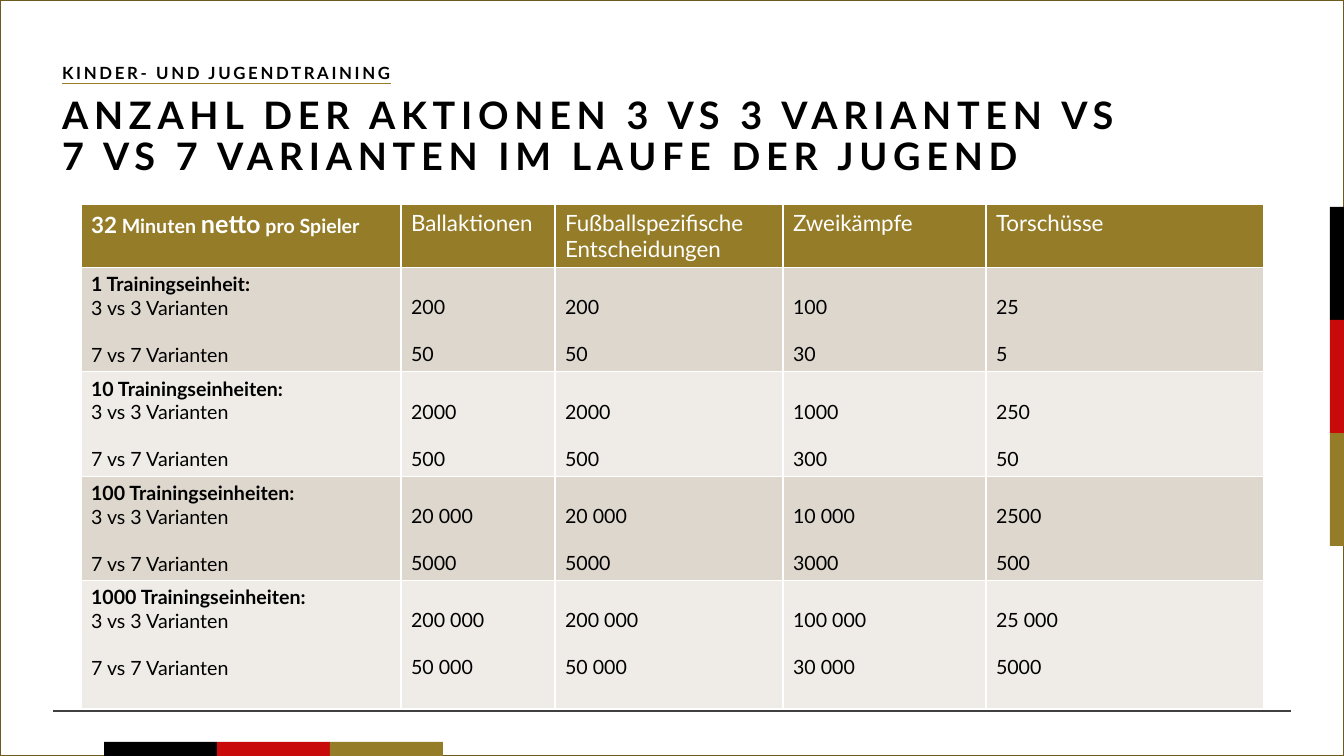
import pptx
import pptx.util
import pptx.dml.color
import pptx.enum.shapes
import pptx.enum.text
import pptx.oxml
import pptx.oxml.ns
from dataclasses import dataclass

SLIDE_W, SLIDE_H = 1344, 756
EMU_PER_PX = 12192000 / SLIDE_W


@dataclass(frozen=True)
class Theme:
    font: str = "Lato"
    black: str = "000000"
    white: str = "FFFFFF"
    red: str = "C80A0A"
    gold: str = "957C28"
    frame: str = "6E5C1E"
    rule: str = "404040"
    bands: tuple = ("DDD7CD", "EFECE8")
    title: int = 27
    kicker: int = 12
    large: int = 18
    header: int = 16
    cell: int = 14
    blank_line: float = 16.8


THEME = Theme()
FLAG = (THEME.black, THEME.red, THEME.gold)

# Table content: actions per player in one training session
HEADERS = ["Ballaktionen", "Fußballspezifische Entscheidungen", "Zweikämpfe", "Torschüsse"]
SMALL_GAME = [200, 200, 100, 25]
LARGE_GAME = [50, 50, 30, 5]
SESSIONS = [1, 10, 100, 1000]
COLUMN_WIDTHS = [320, 154, 228, 203, 278]
ROW_HEIGHTS = [63, 104, 104, 104, 128]


def px(n):
    return pptx.util.Emu(round(n * EMU_PER_PX))


def rgb(value):
    return pptx.dml.color.RGBColor.from_string(value)


def xml(tag, attributes, inner):
    return pptx.oxml.parse_xml(
        f'<a:{tag} {pptx.oxml.ns.nsdecls("a")} {attributes}>{inner}</a:{tag}>')


def solid(color):
    return f'<a:solidFill><a:srgbClr val="{color}"/></a:solidFill>'


def format_run(r, size, color, bold=False):
    r.font.name = THEME.font
    r.font.size = pptx.util.Pt(size)
    r.font.bold = bold
    r.font.color.rgb = rgb(color)


def add_rect(slide, x, y, w, h, fill=None, line=None):
    sp = slide.shapes.add_shape(pptx.enum.shapes.MSO_SHAPE.RECTANGLE,
                                px(x), px(y), px(w), px(h))
    sp.shadow.inherit = False
    if fill:
        sp.fill.solid()
        sp.fill.fore_color.rgb = rgb(fill)
    else:
        sp.fill.background()
    if line:
        sp.line.color.rgb = rgb(line)
        sp.line.width = pptx.util.Pt(1)
    else:
        sp.line.fill.background()


def add_rule(slide, x1, x2, y):
    line = slide.shapes.add_connector(pptx.enum.shapes.MSO_CONNECTOR.STRAIGHT,
                                      px(x1), px(y), px(x2), px(y))
    line.line.color.rgb = rgb(THEME.rule)
    line.line.width = pptx.util.Pt(1)
    line._element.spPr.append(xml("effectLst", "", ""))


def fill_heading(sp, box, text, size, tracking):
    """Place a heading placeholder and set its letter-spaced text."""
    sp.left, sp.top, sp.width, sp.height = map(px, box)
    tf = sp.text_frame
    tf.text = text
    tf.word_wrap = True
    tf.auto_size = pptx.enum.text.MSO_AUTO_SIZE.NONE
    tf.vertical_anchor = pptx.enum.text.MSO_ANCHOR.TOP
    p = tf.paragraphs[0]
    p.alignment = pptx.enum.text.PP_ALIGN.LEFT
    p.line_spacing = 0.9
    p.space_before = pptx.util.Pt(0)
    for r in p.runs:
        format_run(r, size, THEME.black, bold=True)
        r.font._element.set("spc", str(tracking))
    return p


def underline(p, color):
    for r in p.runs:
        r.font.underline = True
        latin = r.font._element.find(pptx.oxml.ns.qn("a:latin"))
        latin.addprevious(xml("uFill", "", solid(color)))


def style_cell(cell, fill):
    tcPr = cell._tc.get_or_add_tcPr()
    for side in "LRTB":
        tcPr.append(xml(f"ln{side}", 'w="12700"', solid(THEME.white)))
    cell.fill.solid()
    cell.fill.fore_color.rgb = rgb(fill)


def fill_header(cell, parts, bold=False):
    style_cell(cell, THEME.gold)
    p = cell.text_frame.paragraphs[0]
    for text, size in parts:
        r = p.add_run()
        r.text = text
        format_run(r, size, THEME.white, bold)


def fill_body(cell, lines, fill, bold_first=False):
    """Write the lines, with a one-line gap above the last."""
    style_cell(cell, fill)
    tf = cell.text_frame
    tf.text = "\n".join(lines)
    for i, p in enumerate(tf.paragraphs):
        format_run(p.runs[0], THEME.cell, THEME.black, bold_first and i == 0)
    tf.paragraphs[-1].space_before = pptx.util.Pt(THEME.blank_line)


def grouped(n):
    return f"{n:,}".replace(",", " ") if n >= 10000 else str(n)


def add_actions_table(slide, x, y):
    table = slide.shapes.add_table(
        len(ROW_HEIGHTS), len(COLUMN_WIDTHS), px(x), px(y),
        px(sum(COLUMN_WIDTHS)), px(sum(ROW_HEIGHTS))).table
    for column, width in zip(table.columns, COLUMN_WIDTHS):
        column.width = px(width)
    for row, height in zip(table.rows, ROW_HEIGHTS):
        row.height = px(height)

    # Header row
    fill_header(table.cell(0, 0), [("32", THEME.header), (" Minuten ", THEME.cell),
                                   ("netto", THEME.large), (" pro Spieler", THEME.cell)],
                bold=True)
    for col, text in enumerate(HEADERS, 1):
        fill_header(table.cell(0, col), [(text, THEME.header)])

    # One row per number of sessions
    for row, count in enumerate(SESSIONS, 1):
        band = THEME.bands[(row - 1) % 2]
        unit = "Trainingseinheit" if count == 1 else "Trainingseinheiten"
        fill_body(table.cell(row, 0),
                  [f"{count} {unit}:", "3 vs 3 Varianten", "7 vs 7 Varianten"],
                  band, bold_first=True)
        for col, (small, large) in enumerate(zip(SMALL_GAME, LARGE_GAME), 1):
            cell = table.cell(row, col)
            cell.margin_top = px(28)
            fill_body(cell, [grouped(small * count), grouped(large * count)], band)


def main():
    prs = pptx.Presentation()
    prs.slide_width, prs.slide_height = px(SLIDE_W), px(SLIDE_H)
    slide = prs.slides.add_slide(prs.slide_layouts.get_by_name("Section Header"))

    # Frame, footer rule and flag stripes
    add_rect(slide, 0, 0, SLIDE_W, SLIDE_H, line=THEME.frame)
    add_rule(slide, 53, 1291, 711)
    for i, color in enumerate(FLAG):
        add_rect(slide, 1330, 207 + 113 * i, 14, 113, fill=color)
        add_rect(slide, 104 + 113 * i, 742, 113, 14, fill=color)

    # Headings
    title, kicker = slide.placeholders
    fill_heading(title, (52, 92, 1239, 47),
                 "ANZAHL DER AKTIONEN 3 VS 3 VARIANTEN VS\v"
                 "7 VS 7 VARIANTEN IM LAUFE DER JUGEND", THEME.title, 410)
    p = fill_heading(kicker, (52, 60, 921, 31), "KINDER- UND JUGENDTRAINING",
                     THEME.kicker, 190)
    underline(p, THEME.gold)

    add_actions_table(slide, 81, 204)
    prs.save("out.pptx")


if __name__ == "__main__":
    main()
